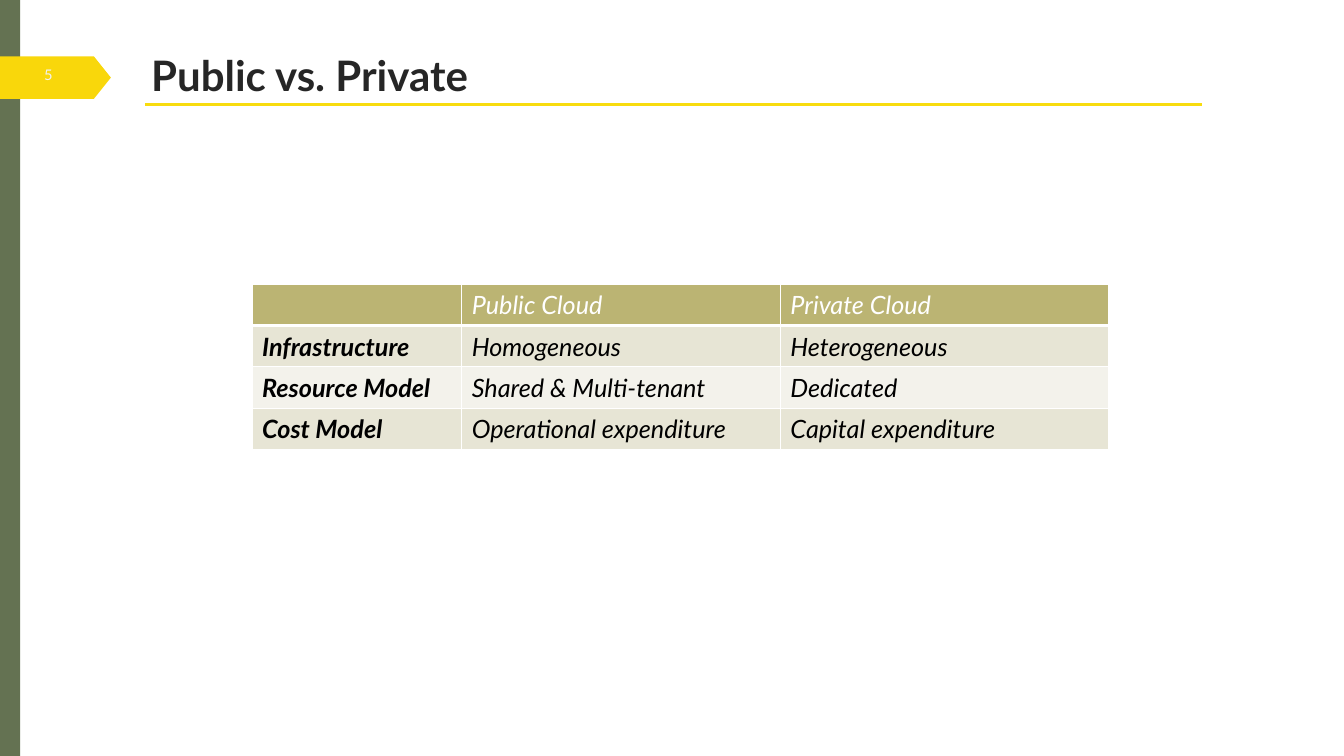
"""Build the "Public vs. Private" cloud comparison slide."""
from lxml import etree
from pptx import Presentation
from pptx.dml.color import RGBColor
from pptx.enum.shapes import MSO_CONNECTOR, MSO_SHAPE
from pptx.enum.text import MSO_ANCHOR, PP_ALIGN
from pptx.oxml.ns import qn
from pptx.util import Inches, Pt

RECTANGLE, PENTAGON = MSO_SHAPE.RECTANGLE, MSO_SHAPE.PENTAGON
STRAIGHT = MSO_CONNECTOR.STRAIGHT
TOP, MIDDLE = MSO_ANCHOR.TOP, MSO_ANCHOR.MIDDLE
LEFT = PP_ALIGN.LEFT

FONT = "Lato"
TITLE = "Public vs. Private"
PAGE_NUMBER = "5"
COMPARISON = [
    ("", "Public Cloud", "Private Cloud"),
    ("Infrastructure", "Homogeneous", "Heterogeneous"),
    ("Resource Model", "Shared & Multi-tenant", "Dedicated"),
    ("Cost Model", "Operational expenditure", "Capital expenditure"),
]
COLUMN_WIDTHS = (2.08, 3.16, 3.26)
ROW_HEIGHT = 0.41
HEADER_FILL = "BBB473"
BAND_FILLS = ("F3F2EB", "E7E5D5")


def color(value):
    return RGBColor.from_string(value)


def add_run(paragraph, text, size, ink, bold=False, italic=False):
    run = paragraph.add_run()
    run.text = text
    font = run.font
    font.name, font.size = FONT, Pt(size)
    font.bold, font.italic = bold, italic
    font.color.rgb = color(ink)


def add_block(slide, preset, box, fill):
    block = slide.shapes.add_shape(preset, *map(Inches, box))
    block.shadow.inherit = False
    block.fill.solid()
    block.fill.fore_color.rgb = color(fill)
    block.line.fill.background()
    return block


def set_borders(cell, bottom_width):
    properties = cell._tc.get_or_add_tcPr()
    for side, width in (("L", 1), ("R", 1), ("T", 1), ("B", bottom_width)):
        border = etree.SubElement(properties, qn(f"a:ln{side}"), w=str(Pt(width)))
        fill = etree.SubElement(border, qn("a:solidFill"))
        etree.SubElement(fill, qn("a:srgbClr"), val="FFFFFF")


def add_comparison(slide):
    frame = slide.shapes.add_table(
        len(COMPARISON), len(COLUMN_WIDTHS), Inches(2.5), Inches(2.82),
        Inches(sum(COLUMN_WIDTHS)), Inches(ROW_HEIGHT * len(COMPARISON)))
    table = frame.table
    for column, width in zip(table.columns, COLUMN_WIDTHS):
        column.width = Inches(width)
    for r, texts in enumerate(COMPARISON):
        is_header = r == 0
        table.rows[r].height = Inches(ROW_HEIGHT)
        for c, text in enumerate(texts):
            cell = table.cell(r, c)
            set_borders(cell, 3 if is_header else 1)
            cell.fill.solid()
            cell.fill.fore_color.rgb = color(HEADER_FILL if is_header else BAND_FILLS[r % 2])
            cell.vertical_anchor = TOP if is_header else MIDDLE
            if text:
                add_run(cell.text_frame.paragraphs[0], text, 18,
                        "FFFFFF" if is_header else "000000",
                        bold=c == 0, italic=True)


def main():
    deck = Presentation()
    deck.slide_width, deck.slide_height = Inches(13.33), Inches(7.5)
    slide = deck.slides.add_slide(deck.slide_layouts[5])

    add_block(slide, RECTANGLE, (0, 0, 0.2, 7.5), "647252")
    page_tag = add_block(slide, PENTAGON, (0, 0.56, 1.1, 0.42), "F9D70B")
    page_tag.adjustments[0] = 0.4

    page_number = slide.shapes.add_textbox(*map(Inches, (0.34, 0.6, 0.39, 0.28)))
    page_number.text_frame.word_wrap = False
    add_run(page_number.text_frame.paragraphs[0], PAGE_NUMBER, 10.5, "F2F2F2")

    underline = slide.shapes.add_connector(
        STRAIGHT, *map(Inches, (1.44, 1.04, 11.92, 1.04)))
    underline.line.color.rgb = color("F8DC0E")
    underline.line.width = Pt(2.25)
    etree.SubElement(underline._element.spPr, qn("a:effectLst"))

    title = slide.shapes.title
    title.left, title.top, title.width, title.height = map(Inches, (1.4, 0.45, 10.58, 0.58))
    title.text_frame.vertical_anchor = MIDDLE
    title.text_frame.word_wrap = True
    heading = title.text_frame.paragraphs[0]
    heading.alignment = LEFT
    add_run(heading, TITLE, 30, "262626", bold=True)

    add_comparison(slide)
    deck.save("out.pptx")


if __name__ == "__main__":
    main()
